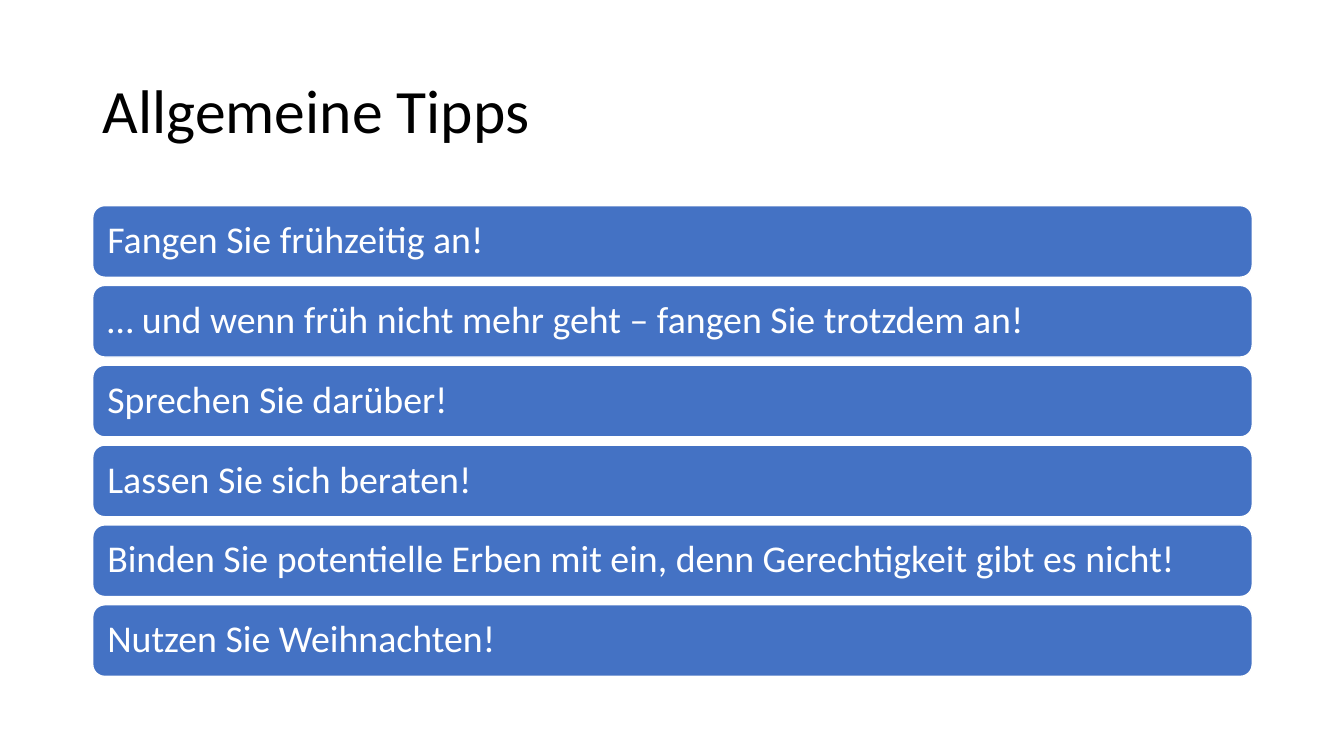
from pptx import Presentation
from pptx.dml.color import RGBColor
from pptx.enum.shapes import MSO_SHAPE
from pptx.enum.text import MSO_ANCHOR, MSO_AUTO_SIZE, PP_ALIGN
from pptx.util import Inches, Pt

BLACK = RGBColor(0x00, 0x00, 0x00)
WHITE = RGBColor(0xFF, 0xFF, 0xFF)
BLUE = RGBColor(0x44, 0x72, 0xC4)

LEFT, WIDTH = 0.92, 11.5
FIRST_TOP, LAST_TOP, BAR_HEIGHT = 2.04, 6.0, 0.71

TIPS = [
    "Fangen Sie frühzeitig an!",
    "… und wenn früh nicht mehr geht – fangen Sie trotzdem an!",
    "Sprechen Sie darüber!",
    "Lassen Sie sich beraten!",
    "Binden Sie potentielle Erben mit ein, denn Gerechtigkeit gibt es nicht!",
    "Nutzen Sie Weihnachten!",
]


class TipSlide:
    font = "Calibri"
    title_size = 44
    bar_size = 27
    bar_inset = 0.11

    def __init__(self, prs):
        self.s = prs.slides.add_slide(prs.slide_layouts[5])

    def add_text(self, tf, text, size, color):
        tf.word_wrap = True
        tf.auto_size = MSO_AUTO_SIZE.NONE
        tf.vertical_anchor = MSO_ANCHOR.MIDDLE
        p = tf.paragraphs[0]
        p.alignment = PP_ALIGN.LEFT
        p.line_spacing = 0.9
        r = p.add_run()
        r.text = text
        r.font.name = self.font
        r.font.size = Pt(size)
        r.font.color.rgb = color

    def title(self, text, left, top, width, height):
        sp = self.s.shapes.title
        sp.left, sp.top = Inches(left), Inches(top)
        sp.width, sp.height = Inches(width), Inches(height)
        self.add_text(sp.text_frame, text, self.title_size, BLACK)

    def bar(self, text, left, top, width, height):
        sp = self.s.shapes.add_shape(
            MSO_SHAPE.ROUNDED_RECTANGLE,
            Inches(left), Inches(top), Inches(width), Inches(height))
        sp.shadow.inherit = False
        sp.fill.solid()
        sp.fill.fore_color.rgb = BLUE
        sp.line.color.rgb = WHITE
        sp.line.width = Pt(1)
        tf = sp.text_frame
        tf.margin_left = tf.margin_right = Inches(self.bar_inset)
        tf.margin_top = tf.margin_bottom = Inches(self.bar_inset)
        self.add_text(tf, text, self.bar_size, WHITE)


def main():
    prs = Presentation()
    prs.slide_width, prs.slide_height = Inches(13.33), Inches(7.5)
    slide = TipSlide(prs)
    slide.title("Allgemeine Tipps", LEFT, 0.4, WIDTH, 1.45)
    pitch = (LAST_TOP - FIRST_TOP) / (len(TIPS) - 1)
    for i, tip in enumerate(TIPS):
        slide.bar(tip, LEFT, FIRST_TOP + i * pitch, WIDTH, BAR_HEIGHT)
    prs.save("out.pptx")


if __name__ == "__main__":
    main()
